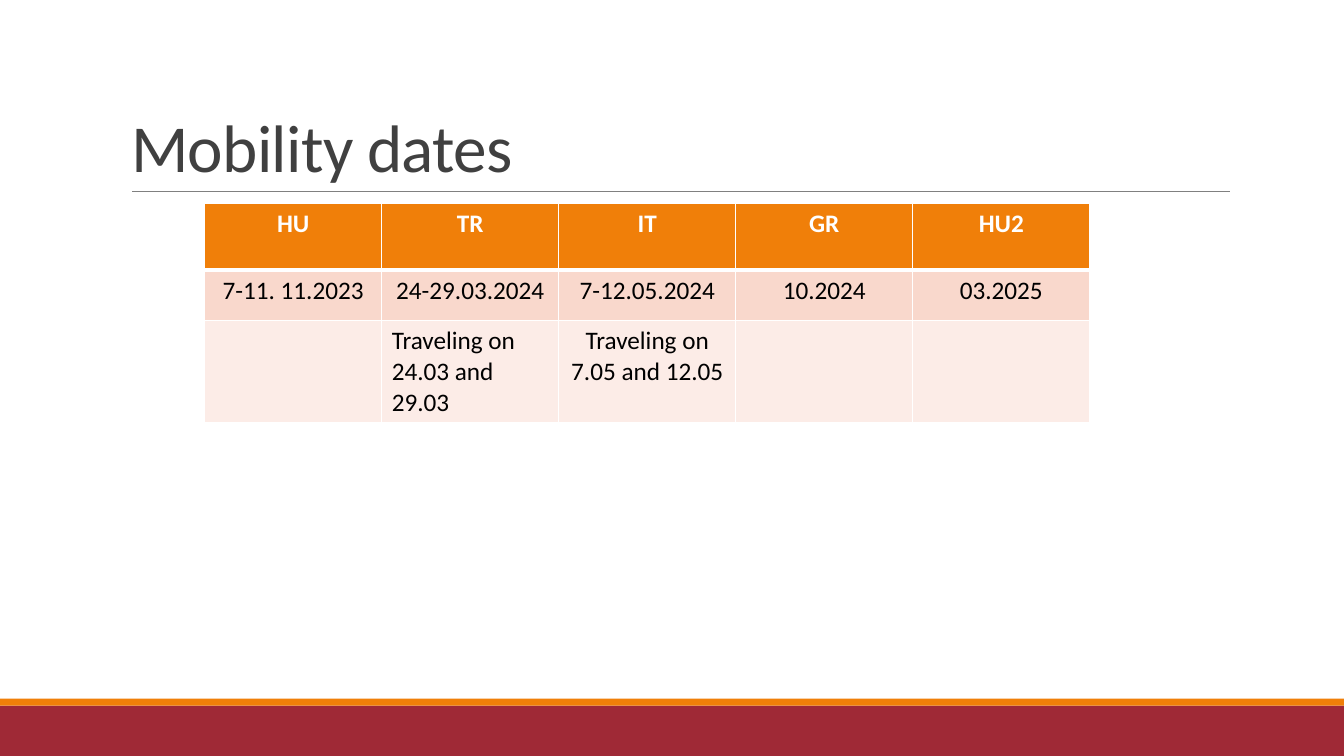
from dataclasses import dataclass

from lxml.etree import SubElement
from pptx import Presentation
from pptx.dml.color import RGBColor as Rgb
from pptx.enum.shapes import MSO_CONNECTOR as Link, MSO_SHAPE as Kind
from pptx.enum.text import MSO_ANCHOR as Anchor, PP_ALIGN as Align
from pptx.oxml.ns import qn
from pptx.util import Inches, Pt


@dataclass(frozen=True)
class Theme:
    """Colours, type sizes and font of the slide."""
    font: str = "Calibri"
    title: int = 48
    body: int = 18
    ink: str = "404040"
    text: str = "000000"
    white: str = "FFFFFF"
    red: str = "9F2936"
    gold: str = "F07F09"
    rule: str = "808080"
    rose: str = "F9D8CC"
    blush: str = "FCECE7"


LOOK = Theme()
WIDE, HIGH = 13.33, 7.5
DATES = [
    ["HU", "TR", "IT", "GR", "HU2"],
    ["7-11. 11.2023", "24-29.03.2024", "7-12.05.2024", "10.2024", "03.2025"],
    ["", "Traveling on 24.03 and 29.03", "Traveling on 7.05 and 12.05", "", ""],
]
ROWS = [0.66, 0.5, 1]


def write(frame, text, size=LOOK.body, color=LOOK.text, bold=False,
          align=Align.CENTER, lead=None, track=0):
    """Put one formatted paragraph in a text frame."""
    par = frame.paragraphs[0]
    par.alignment = align
    if lead:
        par.line_spacing = lead
    run = par.add_run()
    run.text = text
    font = run.font
    font.name, font.size, font.bold = LOOK.font, Pt(size), bold
    font.color.rgb = Rgb.from_string(color)
    if track:
        run._r.get_or_add_rPr().set("spc", str(track))


def band(slide, box, color):
    """Draw a plain filled bar in the box."""
    bar = slide.shapes.add_shape(Kind.RECTANGLE, *map(Inches, box))
    bar.shadow.inherit = False
    bar.fill.solid()
    bar.fill.fore_color.rgb = Rgb.from_string(color)
    bar.line.fill.background()


def footer(slide, box):
    """Stack the thin gold bar on the red bar."""
    left, top, width, height = box
    thin = height / 8
    band(slide, (left, top + thin, width, height - thin), LOOK.red)
    band(slide, (left, top, width, thin), LOOK.gold)


def header(slide, box):
    """Place the title and the rule under it."""
    left, top, width, height = box
    base = Inches(top + height)
    line = slide.shapes.add_connector(
        Link.STRAIGHT, Inches(left + 0.11), base, Inches(left + width), base)
    line.line.color.rgb = Rgb.from_string(LOOK.rule)
    line.line.width = Pt(0.5)
    SubElement(line._element.spPr, qn("a:effectLst"))
    title = slide.shapes.title
    title.left, title.top, title.width, title.height = map(Inches, box)
    frame = title.text_frame
    frame.word_wrap = True
    frame.vertical_anchor = Anchor.BOTTOM
    write(frame, "Mobility dates", size=LOOK.title, color=LOOK.ink,
          align=Align.LEFT, lead=0.85, track=-50)


def edge(cell, row):
    """Give a cell white borders, thick between head and body."""
    props = cell._tc.get_or_add_tcPr()
    thick = {"lnT": row == 1, "lnB": row == 0}
    for at, side in enumerate(("lnL", "lnR", "lnT", "lnB")):
        width = Pt(3 if thick.get(side) else 1)
        line = props.makeelement(qn(f"a:{side}"), {"w": str(width)})
        fill = SubElement(line, qn("a:solidFill"))
        SubElement(fill, qn("a:srgbClr"), val=LOOK.white)
        props.insert(at, line)


def dates(slide, box):
    """Lay out the table of mobility dates."""
    grid = slide.shapes.add_table(
        len(DATES), len(DATES[0]), *map(Inches, box)).table
    fills = (LOOK.gold, LOOK.rose, LOOK.blush)
    for col in grid.columns:
        col.width = Inches(box[2] / len(DATES[0]))
    for row, texts in enumerate(DATES):
        grid.rows[row].height = Inches(ROWS[row])
        for col, text in enumerate(texts):
            cell = grid.cell(row, col)
            cell.fill.solid()
            cell.fill.fore_color.rgb = Rgb.from_string(fills[row])
            edge(cell, row)
            if text:
                head = row == 0
                write(cell.text_frame, text, bold=head,
                      color=LOOK.white if head else LOOK.text,
                      align=Align.LEFT if (row, col) == (2, 1) else Align.CENTER)


def main():
    """Build and save the slide."""
    deck = Presentation()
    deck.slide_width, deck.slide_height = Inches(WIDE), Inches(HIGH)
    slide = deck.slides.add_slide(deck.slide_layouts[5])
    footer(slide, (0, HIGH - 0.57, WIDE, 0.57))
    header(slide, (1.2, 0.31, 11, 1.59))
    dates(slide, (2.03, 2.02, 8.78, sum(ROWS)))
    deck.save("out.pptx")


if __name__ == "__main__":
    main()
